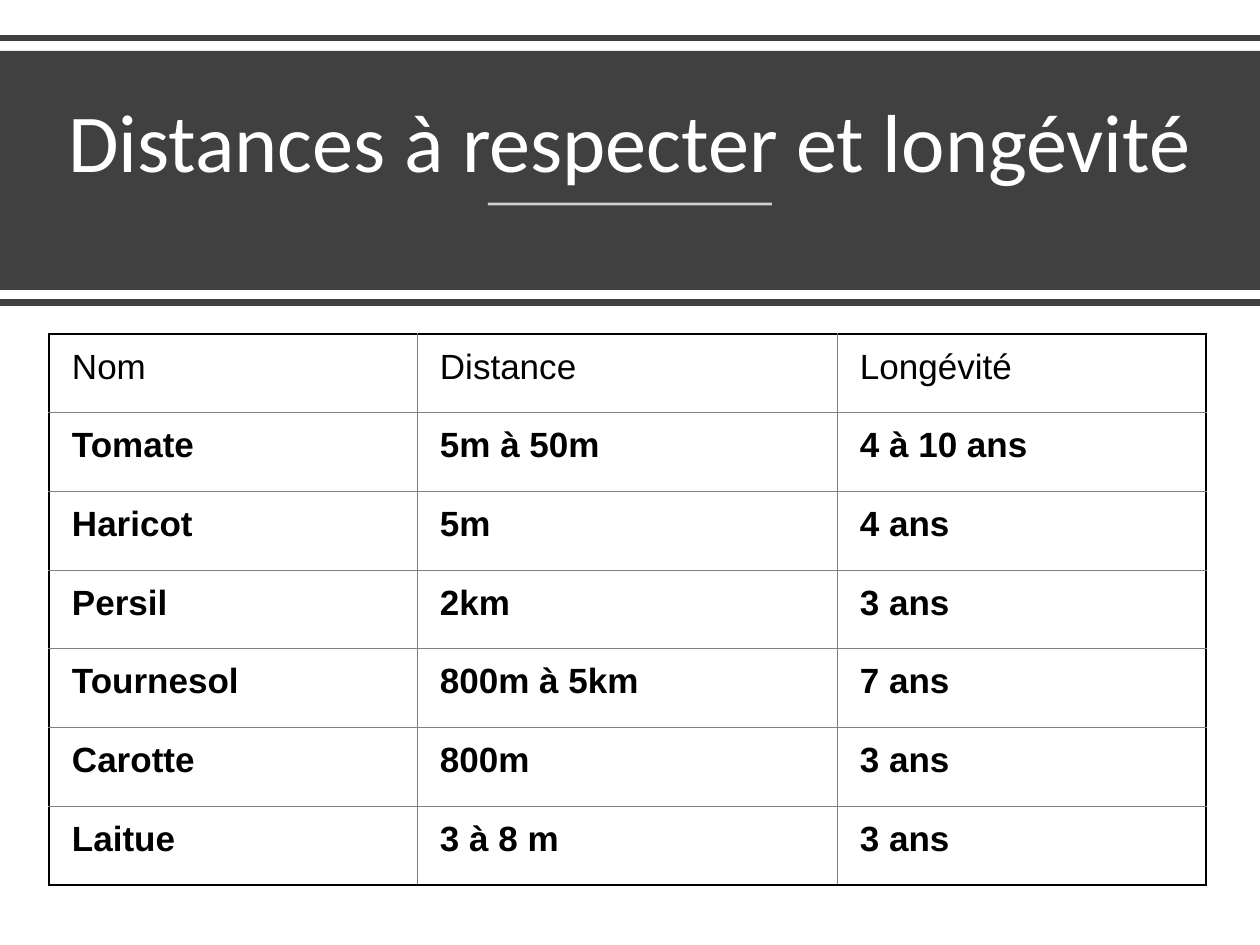
from lxml.etree import SubElement
from pptx import Presentation
from pptx.dml.color import RGBColor
from pptx.enum.shapes import MSO_CONNECTOR, MSO_SHAPE
from pptx.enum.text import MSO_ANCHOR, MSO_AUTO_SIZE, PP_ALIGN
from pptx.oxml.ns import qn
from pptx.util import Emu, Pt

TITLE = "Distances à respecter et longévité"
ROWS = [
    ("Nom", "Distance", "Longévité"),
    ("Tomate", "5m à 50m", "4 à 10 ans"),
    ("Haricot", "5m", "4 ans"),
    ("Persil", "2km", "3 ans"),
    ("Tournesol", "800m à 5km", "7 ans"),
    ("Carotte", "800m", "3 ans"),
    ("Laitue", "3 à 8 m", "3 ans"),
]
COLS = [368, 420, 369]
TABLE_X, TABLE_Y, TABLE_H = 49, 334, 551
WIDTH, HEIGHT = 1260, 945
COLORS = {"dark": "404040", "white": "FFFFFF", "black": "000000", "grid": "808080"}
OUTER, INNER = ("black", 1.5), ("grid", 0.5)


def px(n):
    return Emu(round(n * 914400 / 126))


def rgb(name):
    return RGBColor.from_string(COLORS[name])


def add_rule(slide, left, right, y, color, width, alpha=None):
    """Draw a level line; alpha is its opacity in percent."""
    rule = slide.shapes.add_connector(
        MSO_CONNECTOR.STRAIGHT, px(left), px(y), px(right), px(y))
    rule.line.color.rgb = rgb(color)
    rule.line.width = Pt(width)
    props = rule._element.spPr
    if alpha:
        tint = props.find(".//" + qn("a:srgbClr"))
        SubElement(tint, qn("a:alpha"), val=str(alpha * 1000))
    SubElement(props, qn("a:effectLst"))


def set_edges(cell, edges):
    """Give the cell borders, in the order left, right, top, bottom."""
    props = cell._tc.get_or_add_tcPr()
    for i, (side, (color, width)) in enumerate(zip("LRTB", edges)):
        edge = props.makeelement(qn("a:ln" + side), {"w": str(Pt(width))})
        fill = SubElement(edge, qn("a:solidFill"))
        SubElement(fill, qn("a:srgbClr"), val=COLORS[color])
        props.insert(i, edge)


def fill_title(slide):
    title = slide.shapes.title
    title.left, title.top, title.width, title.height = map(px, (54, 68, 1152, 129))
    slide.shapes._spTree.append(title._element)  # bring in front of the band
    frame = title.text_frame
    frame.text = TITLE
    frame.word_wrap = True
    frame.auto_size = MSO_AUTO_SIZE.NONE
    frame.vertical_anchor = MSO_ANCHOR.BOTTOM
    frame.margin_left = frame.margin_right = 0
    para = frame.paragraphs[0]
    para.alignment = PP_ALIGN.CENTER
    para.line_spacing = 0.9
    para.font.name, para.font.size = "Calibri", Pt(47)
    para.font.color.rgb = rgb("white")


def fill_cell(cell, text, bold):
    cell.fill.background()
    cell.margin_left = px(23)
    cell.margin_right = cell.margin_top = cell.margin_bottom = px(18)
    cell.text = text
    para = cell.text_frame.paragraphs[0]
    para.line_spacing, para.space_before = 0.87, Pt(8)
    para.font.name, para.font.size, para.font.bold = "Arial", Pt(20), bold
    para.font.color.rgb = rgb("black")


def add_grid(slide):
    table = slide.shapes.add_table(
        len(ROWS), len(COLS), px(TABLE_X), px(TABLE_Y),
        px(sum(COLS)), px(TABLE_H)).table
    table.first_row = table.horz_banding = False
    for col, width in zip(table.columns, COLS):
        col.width = px(width)
    last_r, last_c = len(ROWS) - 1, len(COLS) - 1
    for r, row in enumerate(ROWS):
        table.rows[r].height = px(TABLE_H / len(ROWS))
        for c, text in enumerate(row):
            cell = table.cell(r, c)
            fill_cell(cell, text, r > 0)
            rims = (c == 0, c == last_c, r == 0, r == last_r)
            set_edges(cell, [OUTER if rim else INNER for rim in rims])


def main():
    deck = Presentation()
    deck.slide_width, deck.slide_height = px(WIDTH), px(HEIGHT)
    slide = deck.slides.add_slide(deck.slide_layouts[5])
    add_rule(slide, 0, WIDTH, 38, "dark", 4)
    band = slide.shapes.add_shape(
        MSO_SHAPE.RECTANGLE, 0, px(51), px(WIDTH), px(239))
    band.shadow.inherit = False
    band.fill.solid()
    band.fill.fore_color.rgb = rgb("dark")
    band.line.fill.background()
    fill_title(slide)
    add_rule(slide, 488, 772, 204, "white", 1.5, alpha=75)
    add_rule(slide, 0, WIDTH, 303, "dark", 4)
    add_grid(slide)
    deck.save("out.pptx")


if __name__ == "__main__":
    main()
